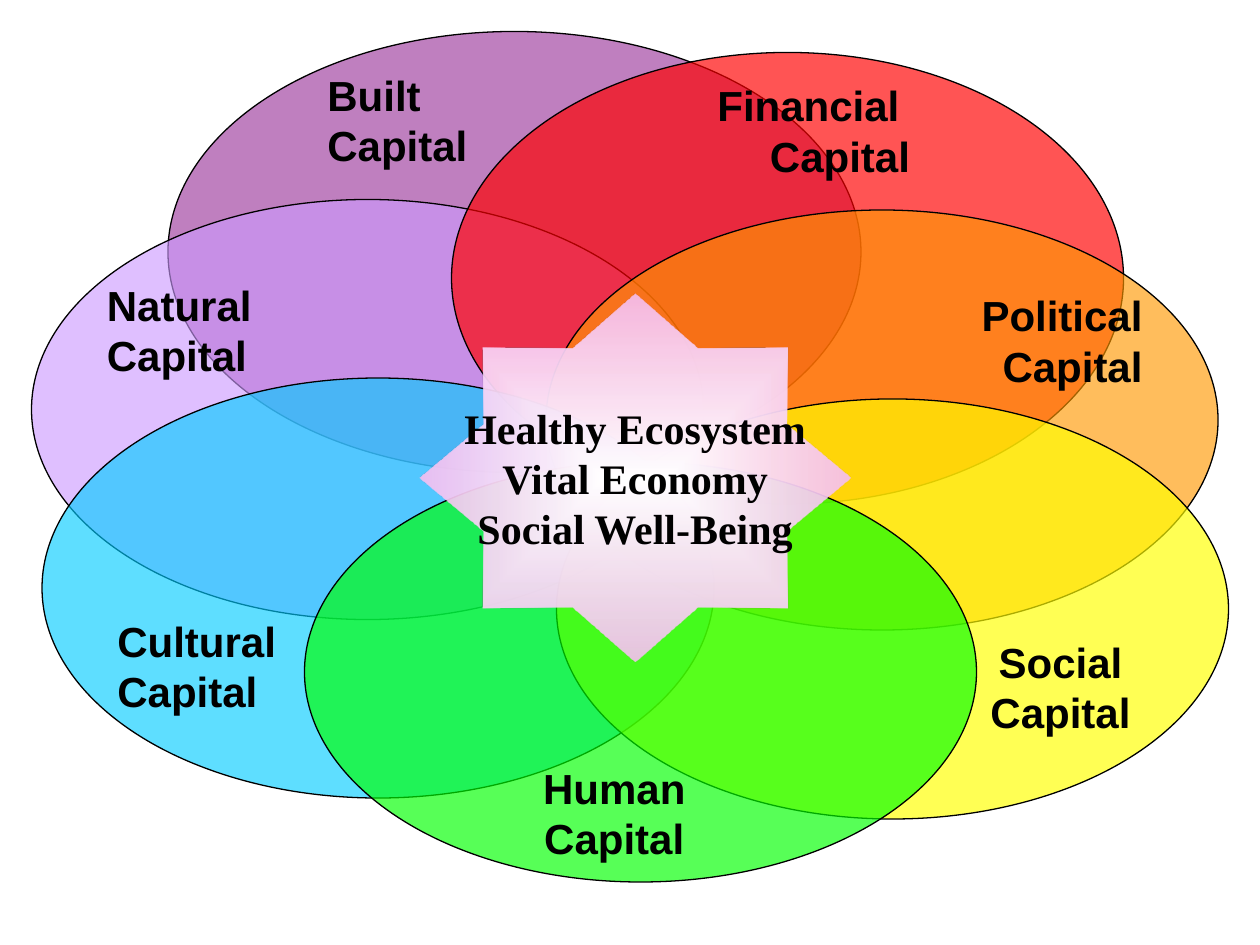
import pptx
import pptx.dml.color
import pptx.enum.shapes
import pptx.enum.text
import pptx.oxml
import pptx.oxml.ns
import pptx.util
import lxml.etree

PX = 9525  # EMU per px, 96 px to the inch
COLORS = {
    "black": "000000",
    "built": "800080",
    "natural": "CC99FF",
    "financial": "FF0000",
    "political": "FF9900",
    "cultural": "00CCFF",
    "social": "FFFF00",
    "human": "00FF00",
    "star_core": "FFFFFF",
    "star_rim": "F5BDF0",
}
SHAPE = pptx.enum.shapes.MSO_SHAPE
ALIGN = pptx.enum.text.PP_ALIGN
qn = pptx.oxml.ns.qn


def rgb(name):
    return pptx.dml.color.RGBColor.from_string(COLORS[name])


def style(paragraph, font_name, align):
    paragraph.alignment = align
    paragraph.font.name = font_name
    paragraph.font.size = pptx.util.Pt(24)
    paragraph.font.bold = True
    paragraph.font.color.rgb = rgb("black")


presentation = pptx.Presentation()
presentation.slide_width = 960 * PX
presentation.slide_height = 720 * PX
slide = presentation.slides.add_slide(presentation.slide_layouts[6])

# Overlapping capitals, back to front: colour, opacity in %, left, top, width, height
capitals = [
    ("built", 50, 128, 24, 528, 336),
    ("natural", 62, 24, 152, 512, 320),
    ("financial", 67, 344, 40, 512, 344),
    ("political", 64, 416, 160, 512, 320),
    ("cultural", 63, 32, 288, 512, 320),
    ("social", 67, 424, 304, 512, 320),
    ("human", 66, 232, 352, 512, 320),
]
for color, opacity, *box in capitals:
    capital = slide.shapes.add_shape(SHAPE.OVAL, *(n * PX for n in box))
    capital.shadow.inherit = False
    capital.fill.solid()
    capital.fill.fore_color.rgb = rgb(color)
    tint = capital.fill._xPr.find(qn("a:solidFill"))[0]
    lxml.etree.SubElement(tint, qn("a:alpha"), val=str(opacity * 1000))
    capital.line.color.rgb = rgb("black")
    capital.line.width = pptx.util.Pt(0.75)

# Central goals, on a star fading outwards from white
star = slide.shapes.add_shape(SHAPE.STAR_8_POINT, 320 * PX, 224 * PX, 328 * PX, 280 * PX)
star.adjustments[0] = 0.38
star.shadow.inherit = False
star.line.fill.background()
gradient = pptx.oxml.parse_xml(
    f'<a:gradFill {pptx.oxml.ns.nsdecls("a")} rotWithShape="1"><a:gsLst>'
    f'<a:gs pos="0"><a:srgbClr val="{COLORS["star_core"]}"/></a:gs>'
    f'<a:gs pos="100000"><a:srgbClr val="{COLORS["star_rim"]}">'
    '<a:alpha val="90000"/></a:srgbClr></a:gs></a:gsLst>'
    '<a:path path="shape"><a:fillToRect l="50000" t="50000" r="50000" b="50000"/></a:path>'
    "</a:gradFill>"
)
star._element.spPr.find(qn("a:prstGeom")).addnext(gradient)
goals = star.text_frame
goals.word_wrap = False
goals.vertical_anchor = pptx.enum.text.MSO_ANCHOR.MIDDLE
goals.text = "Healthy Ecosystem\nVital Economy\nSocial Well-Being"
for goal in goals.paragraphs:
    style(goal, "Times New Roman", ALIGN.CENTER)

# Labels: text, alignment, hanging indent, left, top, width, height
labels = [
    ("Political Capital", ALIGN.RIGHT, 0, 736, 216, 144, 86),
    ("Cultural Capital", ALIGN.LEFT, 0, 80, 464, 152, 86),
    ("Natural Capital", ALIGN.LEFT, 0, 72, 208, 144, 86),
    ("Human Capital", ALIGN.CENTER, 0, 384, 576, 168, 86),
    ("Financial Capital", ALIGN.CENTER, 48, 496, 56, 240, 120),
    ("Social Capital", ALIGN.CENTER, 0, 728, 480, 160, 86),
    ("Built Capital", ALIGN.LEFT, 0, 240, 48, 128, 86),
]
for text, align, hanging, *box in labels:
    label = slide.shapes.add_textbox(*(n * PX for n in box)).text_frame
    label.word_wrap = True
    label.text = text
    style(label.paragraphs[0], "Arial", align)
    if hanging:
        properties = label.paragraphs[0]._p.get_or_add_pPr()
        properties.set("marL", str(hanging * PX))
        properties.set("indent", str(-hanging * PX))

presentation.save("out.pptx")
